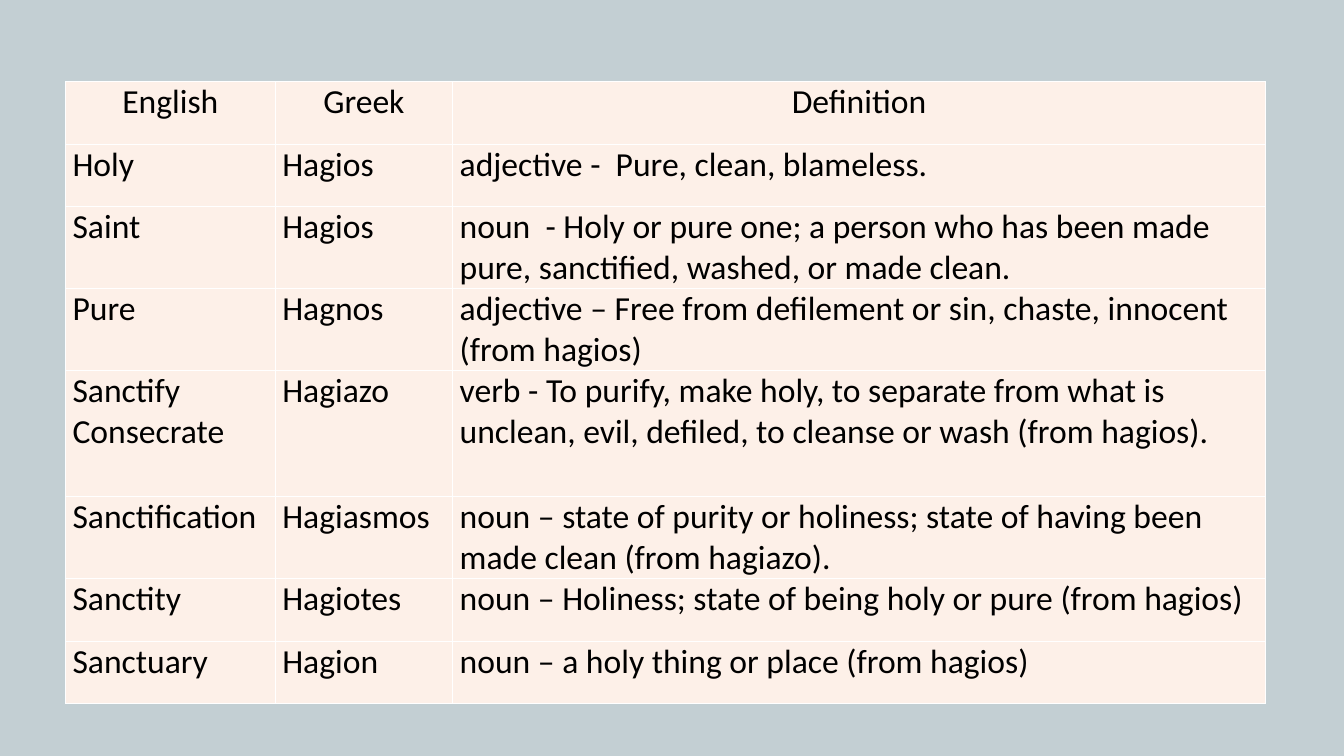
from lxml.etree import SubElement
from pptx import Presentation
from pptx.dml.color import RGBColor
from pptx.enum.text import PP_ALIGN
from pptx.oxml.ns import qn
from pptx.util import Inches, Pt

BACKGROUND = "C3CFD3"
CELL_FILL = "FDF0E8"
BORDER = "FFFFFF"
INK = "000000"

COLUMN_WIDTHS = [2.08, 1.76, 8.06]
ROW_HEIGHT = 0.62
TALL_ROW_HEIGHT = 1.25
TALL_ROW = 4

WORDS = [
    ("English", "Greek", "Definition"),
    ("Holy", "Hagios", "adjective -  Pure, clean, blameless."),
    ("Saint", "Hagios", "noun  - Holy or pure one; a person who has been made pure, sanctified, washed, or made clean."),
    ("Pure", "Hagnos", "adjective – Free from defilement or sin, chaste, innocent (from hagios)"),
    ("Sanctify\nConsecrate", "Hagiazo", "verb - To purify, make holy, to separate from what is unclean, evil, defiled, to cleanse or wash (from hagios)."),
    ("Sanctification", "Hagiasmos", "noun – state of purity or holiness; state of having been made clean (from hagiazo)."),
    ("Sanctity", "Hagiotes", "noun – Holiness; state of being holy or pure (from hagios)"),
    ("Sanctuary", "Hagion", "noun – a holy thing or place (from hagios)"),
]


def color(value):
    return RGBColor.from_string(value)


def add_borders(cell):
    properties = cell._tc.get_or_add_tcPr()
    for side in ("lnL", "lnR", "lnT", "lnB"):
        line = SubElement(properties, qn(f"a:{side}"), w=str(Pt(1)))
        fill = SubElement(line, qn("a:solidFill"))
        SubElement(fill, qn("a:srgbClr"), val=BORDER)


def fill_cell(cell, text, alignment):
    cell.margin_left = cell.margin_right = Inches(0.07)
    cell.margin_top = cell.margin_bottom = 0
    add_borders(cell)
    cell.fill.solid()
    cell.fill.fore_color.rgb = color(CELL_FILL)
    frame = cell.text_frame
    for index, line in enumerate(text.split("\n")):
        para = frame.add_paragraph() if index else frame.paragraphs[0]
        para.alignment = alignment
        span = para.add_run()
        span.text = line
        span.font.name = "Calibri"
        span.font.size = Pt(24)
        span.font.color.rgb = color(INK)


def add_word_table(page, left, top, width, height):
    frame = page.shapes.add_table(
        len(WORDS), len(COLUMN_WIDTHS),
        Inches(left), Inches(top), Inches(width), Inches(height),
    )
    table = frame.table
    for column, share in zip(table.columns, COLUMN_WIDTHS):
        column.width = Inches(width * share / sum(COLUMN_WIDTHS))
    for row_index, (row, texts) in enumerate(zip(table.rows, WORDS)):
        row.height = Inches(TALL_ROW_HEIGHT if row_index == TALL_ROW else ROW_HEIGHT)
        alignment = PP_ALIGN.LEFT if row_index else PP_ALIGN.CENTER
        for cell, text in zip(row.cells, texts):
            fill_cell(cell, text, alignment)


def main():
    deck = Presentation()
    deck.slide_width = Inches(13.33)
    deck.slide_height = Inches(7.5)
    page = deck.slides.add_slide(deck.slide_layouts[6])
    page.background.fill.solid()
    page.background.fill.fore_color.rgb = color(BACKGROUND)
    add_word_table(page, 0.65, 0.81, 11.9, 6.14)
    deck.save("out.pptx")


if __name__ == "__main__":
    main()
